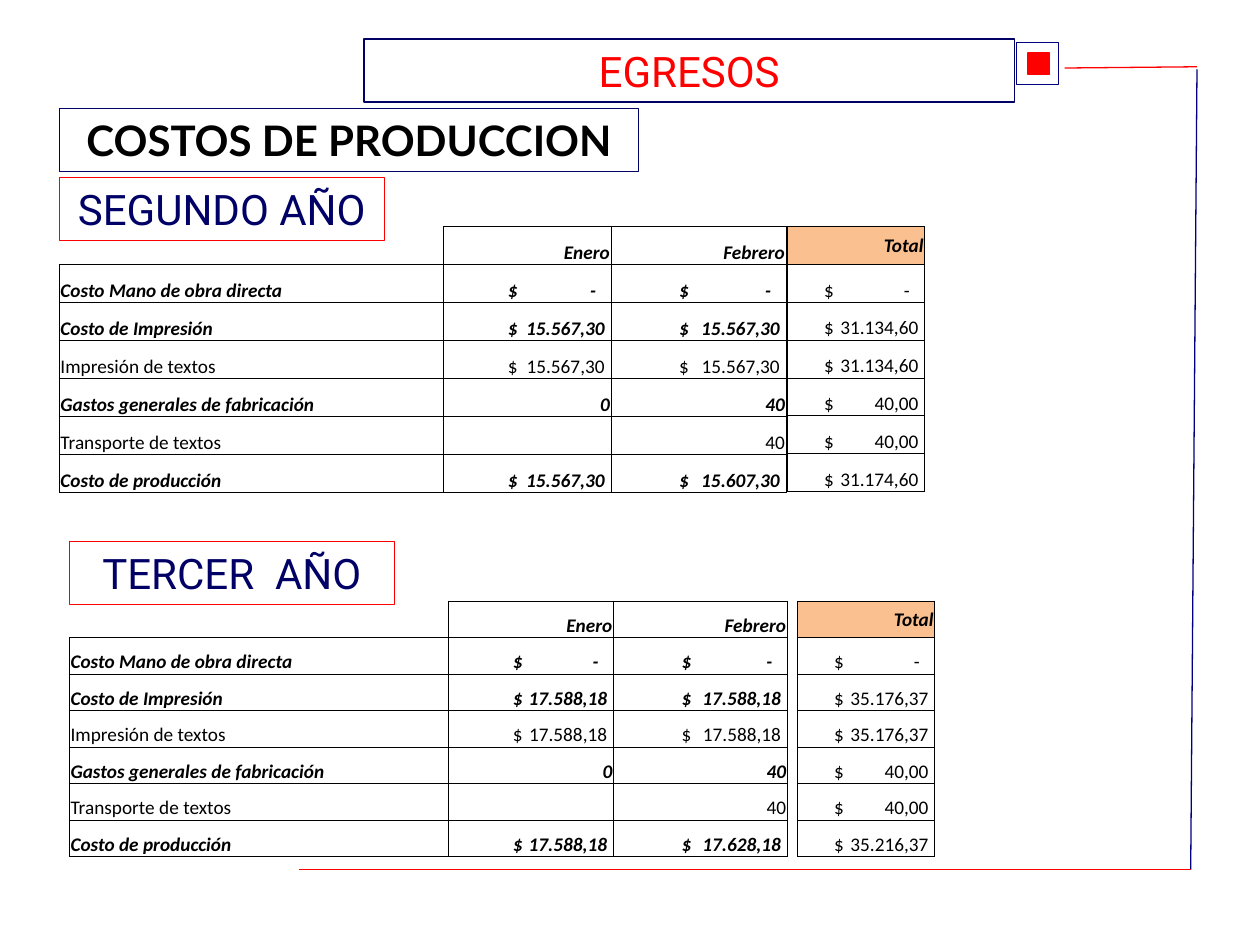
from lxml import etree
from pptx import Presentation
from pptx import util as u
from pptx.dml.color import RGBColor
from pptx.enum import shapes, text
from pptx.oxml.ns import qn

NAVY = RGBColor(0x00, 0x00, 0x66)
BLUE = RGBColor(0x00, 0x00, 0x80)
RED = RGBColor(0xFF, 0x00, 0x00)
BLACK = RGBColor(0x00, 0x00, 0x00)
ORANGE = RGBColor(0xFA, 0xC0, 0x90)

LEFT, CENTER, RIGHT = text.PP_ALIGN.LEFT, text.PP_ALIGN.CENTER, text.PP_ALIGN.RIGHT

LABELS = ["Costo Mano de obra directa", "Costo de Impresión", "Impresión de textos",
          "Gastos generales de fabricación", "Transporte de textos", "Costo de producción"]
DETAIL_LABELS = {"Impresión de textos", "Transporte de textos"}


def write(frame, content, font="Calibri", size=11, color=BLACK, bold=False,
          italic=False, align=LEFT):
    paragraph = frame.paragraphs[0]
    paragraph.alignment = align
    run = paragraph.add_run()
    run.text = content
    run.font.name, run.font.size = font, u.Pt(size)
    run.font.bold, run.font.italic = bold, italic
    run.font.color.rgb = color
    return paragraph


def add_right_tab(paragraph, position):
    tabs = etree.SubElement(paragraph._p.get_or_add_pPr(), qn("a:tabLst"))
    etree.SubElement(tabs, qn("a:tab"), pos=str(u.Inches(position)), algn="r")


def add_borders(cell, hidden=()):
    properties = cell._tc.get_or_add_tcPr()
    for side in "LRTB":
        line = etree.SubElement(properties, qn(f"a:ln{side}"), w=str(u.Pt(0.5)))
        if side in hidden:
            etree.SubElement(line, qn("a:noFill"))
        else:
            fill = etree.SubElement(line, qn("a:solidFill"))
            etree.SubElement(fill, qn("a:srgbClr"), val=str(BLACK))


class CostSlide:
    line_width = u.Pt(0.75)

    def __init__(self, slide):
        self.slide = slide

    def box(self, left, top, width, height, line, fill=None, parent=None):
        shape = (parent or self.slide).shapes.add_shape(
            shapes.MSO_SHAPE.RECTANGLE, *map(u.Inches, (left, top, width, height)))
        shape.shadow.inherit = False
        shape.line.color.rgb, shape.line.width = line, self.line_width
        if fill is None:
            shape.fill.background()
        else:
            shape.fill.solid()
            shape.fill.fore_color.rgb = fill
        return shape

    def heading(self, content, left, top, width, line, **style):
        frame = self.box(left, top, width, 0.5, line).text_frame
        frame.word_wrap = True
        frame.vertical_anchor = text.MSO_ANCHOR.TOP
        write(frame, content, size=24, align=CENTER, **style)

    def line(self, start, end, color):
        connector = self.slide.shapes.add_connector(
            shapes.MSO_CONNECTOR.STRAIGHT, *map(u.Inches, start + end))
        connector.line.color.rgb, connector.line.width = color, self.line_width
        etree.SubElement(connector._element.spPr, qn("a:effectLst"))

    def grid(self, left, top, widths, height, rows):
        table = self.slide.shapes.add_table(
            len(rows), len(widths),
            *map(u.Inches, (left, top, sum(widths), height))).table
        table.first_row = table.horz_banding = False
        for column, width in zip(table.columns, widths):
            column.width = u.Inches(width)
        for row in table.rows:
            row.height = u.Inches(height / len(rows))
        return table

    def cell(self, cell, content, width=0, dollar=0, fill=None, hidden=(), **style):
        """Amounts put the $ sign at `dollar` and end on a right tab."""
        add_borders(cell, hidden)
        cell.margin_left = cell.margin_right = cell.margin_top = u.Inches(0.01)
        cell.margin_bottom = 0
        cell.vertical_anchor = text.MSO_ANCHOR.BOTTOM
        if fill is None:
            cell.fill.background()
        else:
            cell.fill.solid()
            cell.fill.fore_color.rgb = fill
            cell.vertical_anchor = text.MSO_ANCHOR.MIDDLE
        if content.startswith("$"):
            cell.margin_left = u.Inches(dollar)
            style["align"] = LEFT
        paragraph = write(cell.text_frame, content, **style)
        if content.startswith("$"):
            gap = 0.12 if content.endswith("-") else 0.05
            add_right_tab(paragraph, width - dollar - gap)

    def costs(self, left, top, widths, height, january, february):
        rows = [("", "Enero", "Febrero"), *zip(LABELS, january, february)]
        table = self.grid(left, top, widths, height, rows)
        for r, row in enumerate(rows):
            strong = row[0] not in DETAIL_LABELS
            for c, content in enumerate(row):
                self.cell(table.cell(r, c), content, widths[c], (0, 0.51, 0.54)[c],
                          hidden="LT" if r == c == 0 else "",
                          bold=strong, italic=strong, align=RIGHT if c else LEFT)

    def totals(self, left, top, height, amounts):
        width = 1.09
        rows = ["Total", *amounts]
        table = self.grid(left, top, [width], height, rows)
        for r, content in enumerate(rows):
            header = r == 0
            self.cell(table.cell(r, 0), content, width, 0.29,
                      fill=ORANGE if header else None,
                      bold=header, italic=header, align=RIGHT)


def main():
    presentation = Presentation()
    presentation.slide_width, presentation.slide_height = u.Inches(10), u.Inches(7.5)
    page = CostSlide(presentation.slides.add_slide(presentation.slide_layouts[6]))

    # Title and frame lines
    page.heading("EGRESOS", 2.89, 0.31, 5.16, NAVY, font="Roboto", color=RED)
    page.line((8.45, 0.54), (9.5, 0.53), RED)
    page.line((9.5, 0.55), (9.45, 6.9), BLUE)
    page.line((2.37, 6.9), (9.45, 6.9), RED)

    # Corner emblem
    emblem = page.slide.shapes.add_group_shape()
    page.box(8.16, 0.42, 0.17, 0.17, RED, fill=RED, parent=emblem)
    page.box(8.07, 0.34, 0.33, 0.33, BLUE, parent=emblem)

    page.heading("COSTOS DE PRODUCCION", 0.47, 0.86, 4.6, NAVY, font="Lato", bold=True)

    # Second year
    page.heading("SEGUNDO AÑO", 0.47, 1.41, 2.58, RED, font="Roboto", color=NAVY)
    page.costs(0.47, 1.8, (3.05, 1.33, 1.39), 2.11,
               ["$\t-", "$\t15.567,30", "$\t15.567,30", "0", "", "$\t15.567,30"],
               ["$\t-", "$\t15.567,30", "$\t15.567,30", "40", "40", "$\t15.607,30"])
    page.totals(6.25, 1.8, 2.1, ["$\t-", "$\t31.134,60", "$\t31.134,60",
                                 "$\t40,00", "$\t40,00", "$\t31.174,60"])

    # Third year
    page.heading("TERCER  AÑO", 0.55, 4.3, 2.58, RED, font="Roboto", color=NAVY)
    page.costs(0.55, 4.77, (3.01, 1.31, 1.38), 2.03,
               ["$\t-", "$\t17.588,18", "$\t17.588,18", "0", "", "$\t17.588,18"],
               ["$\t-", "$\t17.588,18", "$\t17.588,18", "40", "40", "$\t17.628,18"])
    page.totals(6.33, 4.77, 2.03, ["$\t-", "$\t35.176,37", "$\t35.176,37",
                                   "$\t40,00", "$\t40,00", "$\t35.216,37"])

    presentation.save("out.pptx")


if __name__ == "__main__":
    main()
